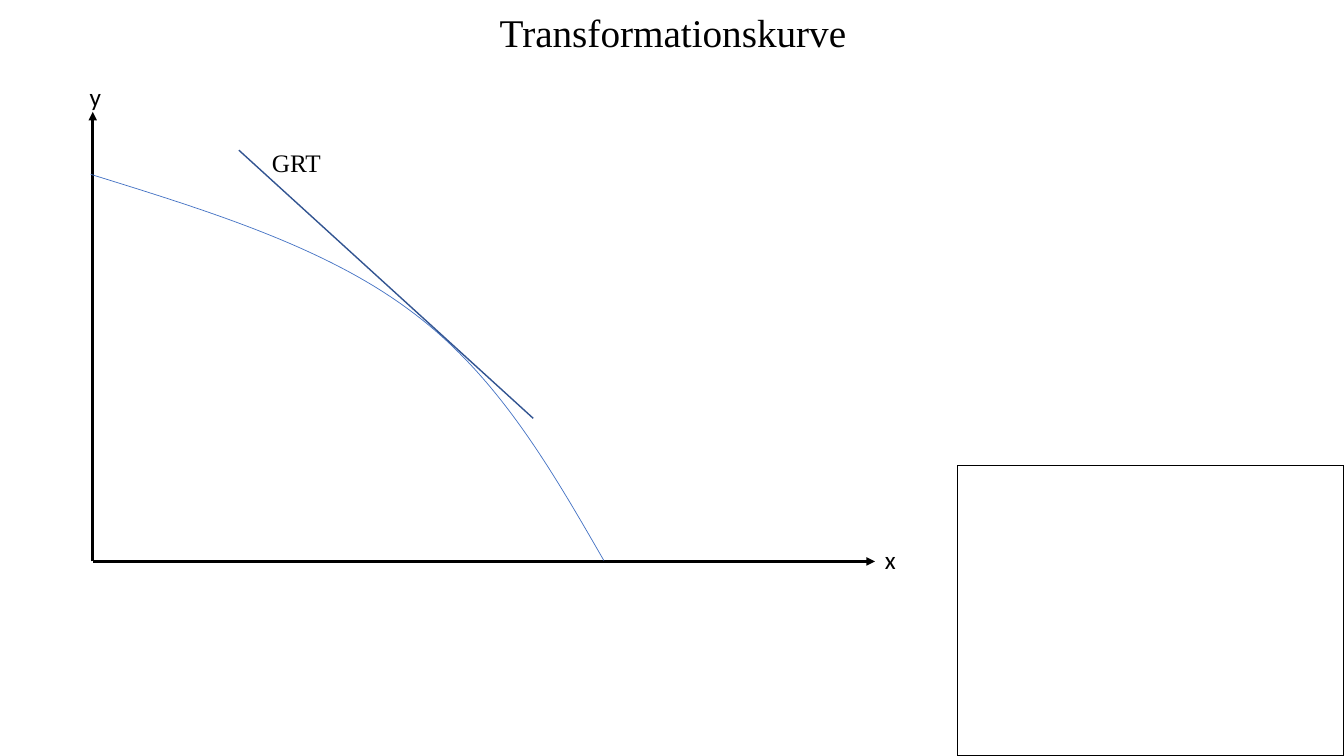
"""Build a slide showing a transformation curve with its tangent."""
from typing import NamedTuple

from lxml import etree
from pptx import Presentation
from pptx.dml.color import RGBColor
from pptx.enum.shapes import MSO_CONNECTOR, MSO_SHAPE
from pptx.enum.text import MSO_ANCHOR, PP_ALIGN
from pptx.oxml.ns import qn
from pptx.util import Pt

STRAIGHT = MSO_CONNECTOR.STRAIGHT
RECTANGLE = MSO_SHAPE.RECTANGLE
TOP, BOTTOM = MSO_ANCHOR.TOP, MSO_ANCHOR.BOTTOM
LEFT, CENTER = PP_ALIGN.LEFT, PP_ALIGN.CENTER

BLACK = RGBColor(0x00, 0x00, 0x00)
CURVE_BLUE = RGBColor(0x44, 0x72, 0xC4)
TANGENT_BLUE = RGBColor(0x32, 0x54, 0x91)
SANS, SERIF = "Calibri", "Times New Roman"

Point = tuple[float, float]
ORIGIN: Point = (66.24, 401.04)
Y_END: Point = (66.24, 79.92)
X_END: Point = (624.96, 401.04)
CURVE: list[Point] = [
    (64.8, 124.56),
    (148.32, 150.48), (232.56, 176.4), (293.76, 222.48),
    (354.96, 267.84), (393.12, 334.08), (431.28, 400.32),
]
TANGENT: list[Point] = [(170.64, 107.28), (380.88, 298.8)]


class Label(NamedTuple):
    text: str
    x: float
    y: float
    w: float
    font: str


LABELS = [
    Label("y", 56.88, 54.72, 20.16, SANS),
    Label("x", 624.96, 385.2, 19.44, SANS),
    Label("GRT", 187.2, 101.52, 66.24, SERIF),
]


def add_text(s, text: str, x: float, y: float, w: float, h: float, *,
             font: str, size: float = 18, align=LEFT, anchor=TOP, wrap: bool = False):
    sp = s.shapes.add_textbox(Pt(x), Pt(y), Pt(w), Pt(h))
    tf = sp.text_frame
    tf.word_wrap = wrap
    tf.vertical_anchor = anchor
    p = tf.paragraphs[0]
    p.alignment = align
    r = p.add_run()
    r.text = text
    r.font.name = font
    r.font.size = Pt(size)
    r.font.color.rgb = BLACK


def set_line(sp, color: RGBColor, width: float):
    sp.line.color.rgb = color
    sp.line.width = Pt(width)


def add_line(s, start: Point, end: Point, color: RGBColor, width: float, arrow: bool = False):
    cx = s.shapes.add_connector(STRAIGHT, *(Pt(v) for v in start + end))
    set_line(cx, color, width)
    if arrow:
        etree.SubElement(cx.line._get_or_add_ln(), qn("a:tailEnd"), type="triangle")
    etree.SubElement(cx._element.spPr, qn("a:effectLst"))


def add_curve(s, points: list[Point], color: RGBColor, width: float):
    start, *rest = [(Pt(x), Pt(y)) for x, y in points]
    builder = s.shapes.build_freeform(*start)
    builder.add_line_segments(rest, close=False)
    sp = builder.convert_to_shape()
    path = next(sp._element.iter(qn("a:path")))
    segments = path.findall(qn("a:lnTo"))
    for i in range(0, len(segments), 3):
        bezier = etree.SubElement(path, qn("a:cubicBezTo"))
        for segment in segments[i:i + 3]:
            bezier.append(segment[0])
            path.remove(segment)
    sp.fill.background()
    sp.shadow.inherit = False
    set_line(sp, color, width)


def add_frame(s, x: float, y: float, w: float, h: float):
    sp = s.shapes.add_shape(RECTANGLE, Pt(x), Pt(y), Pt(w), Pt(h))
    sp.fill.background()
    sp.shadow.inherit = False
    set_line(sp, BLACK, 1)


def main():
    prs = Presentation()
    prs.slide_width, prs.slide_height = Pt(960), Pt(540)
    s = prs.slides.add_slide(prs.slide_layouts[6])
    add_text(s, "Transformationskurve", 1.44, 0.72, 958.56, 42.48,
             font=SERIF, size=28, align=CENTER, anchor=BOTTOM, wrap=True)
    for end in (Y_END, X_END):
        add_line(s, ORIGIN, end, BLACK, 2, arrow=True)
    add_curve(s, CURVE, CURVE_BLUE, 0.5)
    add_line(s, *TANGENT, TANGENT_BLUE, 1)
    for label in LABELS:
        add_text(s, label.text, label.x, label.y, label.w, 28.8, font=label.font)
    add_frame(s, 684, 332.64, 276, 207.36)
    prs.save("out.pptx")


if __name__ == "__main__":
    main()
